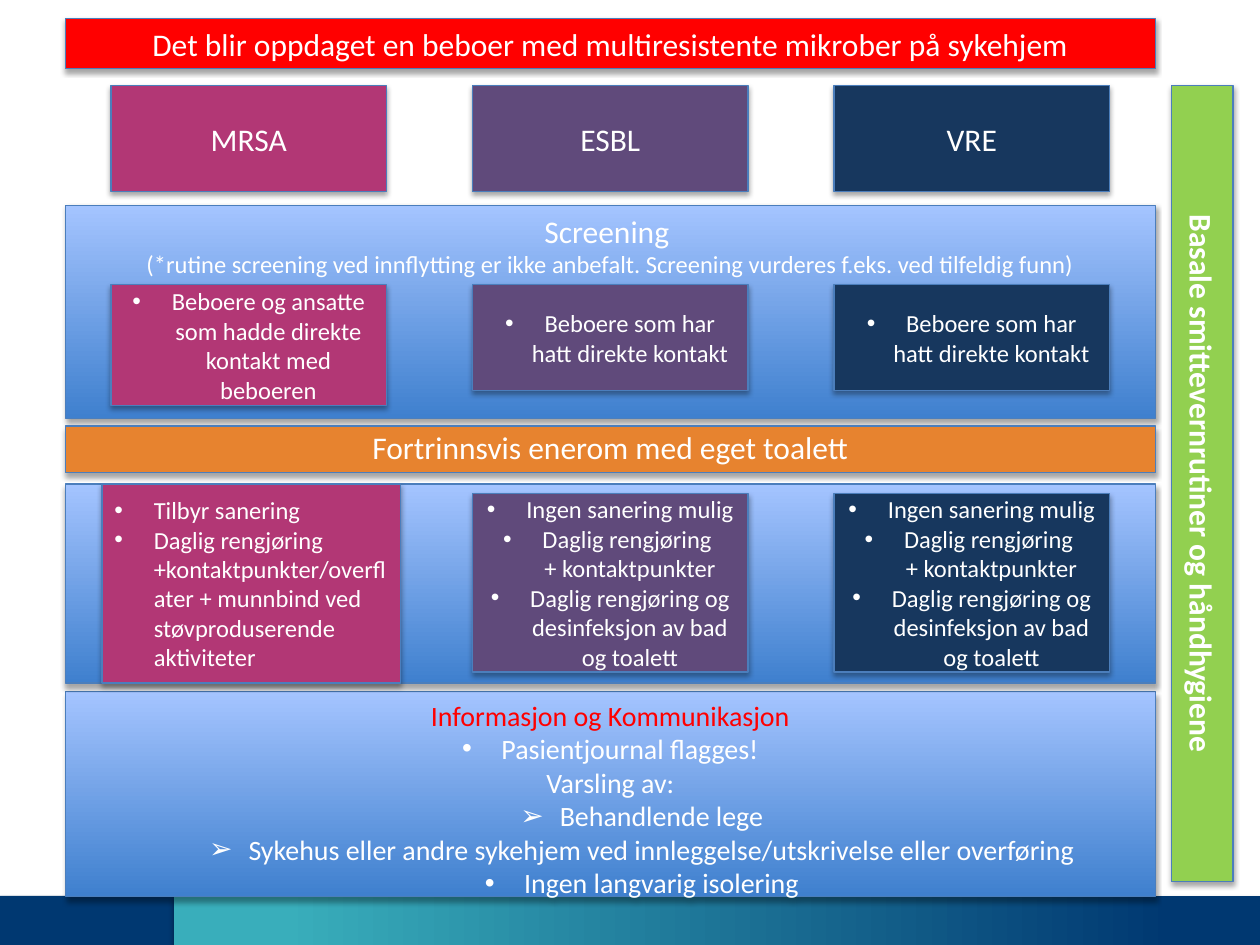
from lxml import etree
from pptx import Presentation
from pptx import util as u
from pptx.dml.color import RGBColor
from pptx.enum import shapes, text
from pptx.oxml.ns import qn

COLORS = {
    "white": "FFFFFF", "black": "000000", "red": "FF0000", "line": "4B7EBC",
    "magenta": "B23775", "purple": "604A7B", "navy": "17375E",
    "green": "92D050", "orange": "E7832F",
    "panel_dark": "3F80CE", "panel_light": "A4C4FF",
    "teal": "39AEBB", "footer": "003871",
}
FONT = "Calibri"
DOT, ARROW = "•", "➢"

TITLE = "Det blir oppdaget en beboer med multiresistente mikrober på sykehjem"
SIDEBAR = "Basale smittevernrutiner og håndhygiene"
ROOM = "Fortrinnsvis enerom med eget toalett"
SCREENING = [
    ("Screening ", {"size": 18}),
    ("(*rutine screening ved innflytting er ikke anbefalt. "
     "Screening vurderes f.eks. ved tilfeldig funn)", {"size": 14}),
]
INFORMATION = [
    ("Informasjon og Kommunikasjon", {"color": "red"}),
    ("Pasientjournal flagges!", {"bullet": DOT}),
    ("Varsling av:", {}),
    ("Behandlende lege", {"bullet": ARROW, "level": 1}),
    ("Sykehus eller andre sykehjem ved innleggelse/utskrivelse eller overføring",
     {"bullet": ARROW, "level": 1}),
    ("Ingen langvarig isolering", {"bullet": DOT, "level": 1}),
]
CONTACTS = ["Beboere som har hatt direkte kontakt"]
CLEANING = [
    "Ingen sanering mulig",
    "Daglig rengjøring \v+ kontaktpunkter",
    "Daglig rengjøring og desinfeksjon av bad og toalett",
]
MICROBES = [
    {"name": "MRSA", "color": "magenta", "screen_height": 69,
     "contacts": ["Beboere og ansatte som hadde direkte kontakt med beboeren"],
     "measures": ["Tilbyr sanering",
                  "Daglig rengjøring +kontaktpunkter/overflater + munnbind ved "
                  "støvproduserende aktiviteter"],
     "measures_box": (58.3, 276.5, 170.6, 113.8), "align": "LEFT"},
    {"name": "ESBL", "color": "purple", "contacts": CONTACTS, "measures": CLEANING},
    {"name": "VRE", "color": "navy", "contacts": CONTACTS, "measures": CLEANING},
]

SLIDE_W, SLIDE_H = 720, 540
PANEL_X, PANEL_W = 37.4, 622.8
COL_X, COL_PITCH, COL_W, COL_H = 63.4, 206.6, 157.5, 60.5
FOOTER_Y, FOOTER_SPLIT = 512, 99.4
INDENT, LEVEL_STEP = 22.5, 36
PANEL_FILL = [(0, "panel_dark"), (100, "panel_light")]


def rgb(name):
    return RGBColor.from_string(COLORS[name])


def style(sp, fill, angle=90, line=True):
    """Fill with a colour name or gradient stops, and set outline and soft shadow."""
    if isinstance(fill, str):
        sp.fill.solid()
        sp.fill.fore_color.rgb = rgb(fill)
    else:
        sp.fill.gradient()
        sp.fill.gradient_angle = angle
        for stop, (position, color) in zip(sp.fill.gradient_stops, fill):
            stop.position = position / 100
            stop.color.rgb = rgb(color)
    if line:
        sp.line.color.rgb = rgb("line")
        sp.line.width = u.Pt(0.75)
    else:
        sp.line.fill.background()
    sp.shadow.inherit = False
    effects = sp._element.spPr.find(qn("a:effectLst"))
    shadow = etree.SubElement(effects, qn("a:outerShdw"), blurRad=str(u.Pt(3.1)),
                              dist=str(u.Pt(1.8)), dir="5400000", rotWithShape="0")
    color = etree.SubElement(shadow, qn("a:srgbClr"), val=COLORS["black"])
    etree.SubElement(color, qn("a:alpha"), val="35000")


def place(sp, box):
    sp.left, sp.top, sp.width, sp.height = (u.Pt(v) for v in box)


def add_box(s, box, fill, **look):
    sp = s.shapes.add_shape(shapes.MSO_SHAPE.RECTANGLE, *(u.Pt(v) for v in box))
    style(sp, fill, **look)
    return sp


def set_bullet(p, bullet, level):
    pPr = p._p.get_or_add_pPr()
    margin = INDENT + LEVEL_STEP * level if bullet else 0
    pPr.set("marL", str(u.Pt(margin)))
    pPr.set("indent", str(u.Pt(-INDENT if bullet else 0)))
    if bullet:
        etree.SubElement(pPr, qn("a:buFont"), typeface="Arial")
        etree.SubElement(pPr, qn("a:buChar"), char=bullet)
    else:
        etree.SubElement(pPr, qn("a:buNone"))


def add_text(p, content, size=18, color="white", bold=False, align="CENTER",
             bullet=None, level=0):
    p.text = content
    p.level = level
    p.alignment = getattr(text.PP_ALIGN, align)
    p.space_before = u.Pt(0)
    set_bullet(p, bullet, level)
    for r in p.runs:
        r.font.name = FONT
        r.font.size = u.Pt(size)
        r.font.bold = bold
        r.font.color.rgb = rgb(color)


def write(sp, lines, anchor="MIDDLE", **common):
    """Fill a shape from (text, format) pairs; common holds the shared format."""
    tf = sp.text_frame
    tf.word_wrap = True
    tf.auto_size = text.MSO_AUTO_SIZE.NONE
    tf.vertical_anchor = getattr(text.MSO_ANCHOR, anchor)
    for i, (content, look) in enumerate(lines):
        p = tf.add_paragraph() if i else tf.paragraphs[0]
        add_text(p, content, **{**common, **look})


def bullets(items):
    return [(item, {"bullet": DOT}) for item in items]


def add_microbe(s, column, m):
    x = COL_X + column * COL_PITCH
    header = add_box(s, (x, 49, COL_W, COL_H), m["color"])
    write(header, [(m["name"], {})])
    screen = add_box(s, (x, 162.8, COL_W, m.get("screen_height", COL_H)), m["color"])
    write(screen, bullets(m["contacts"]), size=14)
    box = m.get("measures_box", (x, 282, COL_W, 102))
    measures = add_box(s, box, m["color"])
    write(measures, bullets(m["measures"]), size=14, align=m.get("align", "CENTER"))


def main():
    prs = Presentation()
    prs.slide_width, prs.slide_height = u.Pt(SLIDE_W), u.Pt(SLIDE_H)
    s = prs.slides.add_slide(prs.slide_layouts[1])
    title, body = s.shapes.title, s.placeholders[1]

    place(title, (PANEL_X, 10.5, PANEL_W, 28.8))
    style(title, "red")
    write(title, [(TITLE, {})])

    footer_h = SLIDE_H - FOOTER_Y
    add_box(s, (0, FOOTER_Y, FOOTER_SPLIT, footer_h), "footer", line=False)
    add_box(s, (FOOTER_SPLIT, FOOTER_Y, SLIDE_W - FOOTER_SPLIT, footer_h),
            [(10, "teal"), (92, "footer")], angle=0, line=False)

    place(body, (PANEL_X, 395.3, PANEL_W, 116.9))
    style(body, PANEL_FILL)
    write(body, INFORMATION, anchor="TOP", size=16)
    s.shapes._spTree.append(body._element)  # in front of the footer

    screening = add_box(s, (PANEL_X, 117.4, PANEL_W, 121.6), PANEL_FILL)
    write(screening, SCREENING, anchor="TOP")
    room = add_box(s, (PANEL_X, 243.4, PANEL_W, 26.5), "orange")
    write(room, [(ROOM, {})], anchor="BOTTOM")
    add_box(s, (PANEL_X, 276.5, PANEL_W, 113.8), PANEL_FILL)

    sidebar = add_box(s, (459.5, 258.6, 455, 35.3), "green")
    sidebar.rotation = 90
    write(sidebar, [(SIDEBAR, {})], bold=True)

    for column, m in enumerate(MICROBES):
        add_microbe(s, column, m)

    prs.save("out.pptx")


if __name__ == "__main__":
    main()
